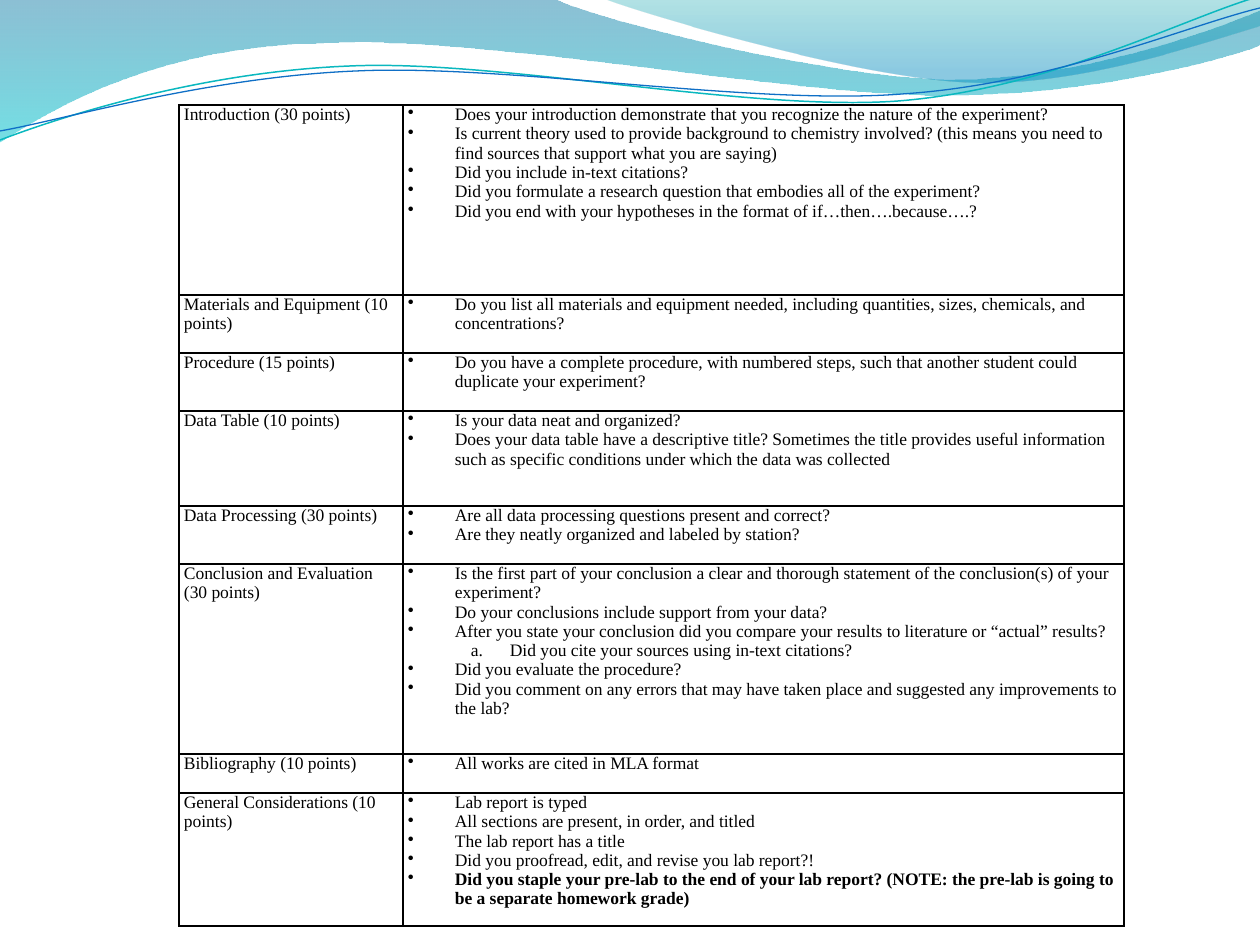
import pptx
import pptx.util
import pptx.dml.color
import pptx.oxml.ns
import lxml.etree as etree

RGBColor = pptx.dml.color.RGBColor
qn = pptx.oxml.ns.qn
PX = 914400 / 126

BLACK = RGBColor(0x00, 0x00, 0x00)
DEEP_BLUE = RGBColor(0x00, 0x74, 0xA1)
AQUA = RGBColor(0x00, 0xC6, 0xCF)
TEAL = RGBColor(0x00, 0xA1, 0xA9)
SKY = RGBColor(0x00, 0x8B, 0xBF)
LINE_TEAL = RGBColor(0x0A, 0xB8, 0xBF)
LINE_BLUE = RGBColor(0x0F, 0x6F, 0xC6)

FONT = "Times New Roman"
TABLE_LEFT, TABLE_TOP = 179, 105
COLUMNS = [224, 721]
BULLET, LETTERED, BOLD = "bullet", "lettered", "bold"
INDENTS = {BULLET: (47, -47), BOLD: (47, -47), LETTERED: (102, -39)}

RUBRIC = [
    ("Introduction (30 points)", 190, [
        (BULLET, "Does your introduction demonstrate that you recognize the nature of the experiment?"),
        (BULLET, "Is current theory used to provide background to chemistry involved? "
                 "(this means you need to find sources that support what you are saying)"),
        (BULLET, "Did you include in-text citations?"),
        (BULLET, "Did you formulate a research question that embodies all of the experiment?"),
        (BULLET, "Did you end with your hypotheses in the format of if…then….because….?"),
    ]),
    ("Materials and Equipment (10 points)", 58, [
        (BULLET, "Do you list all materials and equipment needed, including quantities, sizes, "
                 "chemicals, and concentrations?"),
    ]),
    ("Procedure (15 points)", 58, [
        (BULLET, "Do you have a complete procedure, with numbered steps, such that another student "
                 "could duplicate your experiment?"),
    ]),
    ("Data Table (10 points)", 95, [
        (BULLET, "Is your data neat and organized?"),
        (BULLET, "Does your data table have a descriptive title? Sometimes the title provides useful "
                 "information such as specific conditions under which the data was collected"),
    ]),
    ("Data Processing (30 points)", 58, [
        (BULLET, "Are all data processing questions present and correct?"),
        (BULLET, "Are they neatly organized and labeled by station?"),
    ]),
    ("Conclusion and Evaluation (30 points)", 190, [
        (BULLET, "Is the first part of your conclusion a clear and thorough statement of the "
                 "conclusion(s) of your experiment?"),
        (BULLET, "Do your conclusions include support from your data?"),
        (BULLET, "After you state your conclusion did you compare your results to literature or “actual” results?"),
        (LETTERED, "Did you cite your sources using in-text citations?"),
        (BULLET, "Did you evaluate the procedure?"),
        (BULLET, "Did you comment on any errors that may have taken place and suggested any "
                 "improvements to the lab?"),
    ]),
    ("Bibliography (10 points)", 39, [
        (BULLET, "All works are cited in MLA format"),
    ]),
    ("General Considerations (10 points)", 133, [
        (BULLET, "Lab report is typed"),
        (BULLET, "All sections are present, in order, and titled"),
        (BULLET, "The lab report has a title"),
        (BULLET, "Did you proofread, edit, and revise you lab report?!"),
        (BOLD, "Did you staple your pre-lab to the end of your lab report? "
               "(NOTE: the pre-lab is going to be a separate homework grade)"),
    ]),
]

BANDS = [
    ([[(0, 0)], [(554, -1)],
      [(600, 21), (837, 79), (955, 79)], [(1075, 79), (1207, 33), (1260, 11)],
      [(1261, 45)],
      [(1239, 55), (1096, 96), (940, 95)], [(784, 95), (481, 35), (324, 43)],
      [(163, 45), (58, 105), (-1, 142)], [(0, 0)]],
     [(0, DEEP_BLUE, 45), (1, AQUA, 55)]),
    ([[(604, -1)], [(641, 14), (859, 78), (969, 82)], [(1079, 87), (1211, 40), (1260, 26)],
      [(1260, 0)], [(604, -1)]],
     [(0, TEAL, 30), (0.8, SKY, 45)]),
]

WAVES = [
    ([[(0, 140)], [(60, 117), (199, 72), (349, 66)], [(498, 59), (747, 112), (898, 101)],
      [(1050, 89), (1182, 19), (1257, -3)]], LINE_TEAL, 0.85),
    ([[(0, 131)], [(59, 121), (207, 77), (357, 71)], [(508, 64), (752, 106), (903, 94)],
      [(1053, 84), (1186, 26), (1260, 8)]], LINE_BLUE, 0.75),
]


def px(length):
    return pptx.util.Emu(round(length * PX))


def add_curve(slide, route, close):
    first, *rest = [(px(x), px(y)) for segment in route for x, y in segment]
    builder = slide.shapes.build_freeform(*first, scale=1.0)
    builder.add_line_segments(rest, close=close)
    curve = builder.convert_to_shape()
    curve.shadow.inherit = False
    steps = iter(list(curve.element.iter(qn("a:lnTo"))))
    for segment in route[1:]:
        step, *controls = [next(steps) for _ in segment]
        if controls:
            bezier = etree.Element(qn("a:cubicBezTo"))
            step.addprevious(bezier)
            for part in (step, *controls):
                bezier.append(part[0])
                part.getparent().remove(part)
    return curve


def add_band(slide, route, stops):
    band = add_curve(slide, route, True)
    band.line.fill.background()
    band.fill.gradient()
    band.fill.gradient_angle = 270
    for stop, (position, color, _) in zip(band.fill.gradient_stops, stops):
        stop.position = position
        stop.color.rgb = color
    for color, (_, _, opacity) in zip(band.element.spPr.iter(qn("a:srgbClr")), stops):
        etree.SubElement(color, qn("a:alpha"), val=str(opacity * 1000))


def add_wave(slide, route, color, width):
    wave = add_curve(slide, route, False)
    wave.fill.background()
    wave.line.color.rgb = color
    wave.line.width = pptx.util.Pt(width)


def write(paragraph, text, size=10, color=BLACK, kind=None):
    run = paragraph.add_run()
    run.text = text
    run.font.name = FONT
    run.font.size = pptx.util.Pt(size)
    run.font.bold = kind == BOLD
    run.font.color.rgb = color
    if kind is None:
        return
    properties = paragraph._p.get_or_add_pPr()
    margin, indent = INDENTS[kind]
    properties.set("marL", str(px(margin)))
    properties.set("indent", str(px(indent)))
    if kind == LETTERED:
        paragraph.level = 1
        etree.SubElement(properties, qn("a:buAutoNum"), type="alphaLcPeriod")
    else:
        etree.SubElement(properties, qn("a:buChar"), char="•")


def format_cell(cell):
    cell.margin_left = cell.margin_right = px(5)
    cell.margin_top = cell.margin_bottom = 0
    properties = cell._tc.get_or_add_tcPr()
    for side in ("a:lnL", "a:lnR", "a:lnT", "a:lnB"):
        border = etree.SubElement(properties, qn(side), w=str(pptx.util.Pt(1)))
        fill = etree.SubElement(border, qn("a:solidFill"))
        etree.SubElement(fill, qn("a:srgbClr"), val=str(BLACK))
    cell.fill.background()


def add_rubric(slide):
    height = sum(row_height for _, row_height, _ in RUBRIC)
    rubric = slide.shapes.add_table(
        len(RUBRIC), len(COLUMNS), px(TABLE_LEFT), px(TABLE_TOP), px(sum(COLUMNS)), px(height)).table
    rubric.first_row = rubric.horz_banding = False
    for column, width in zip(rubric.columns, COLUMNS):
        column.width = px(width)
    for row, (section, row_height, questions) in zip(rubric.rows, RUBRIC):
        row.height = px(row_height)
        section_cell, question_cell = row.cells
        format_cell(section_cell)
        format_cell(question_cell)
        write(section_cell.text_frame.paragraphs[0], section)
        frame = question_cell.text_frame
        for index, (kind, question) in enumerate(questions):
            write(frame.add_paragraph() if index else frame.paragraphs[0], question, kind=kind)


def main():
    deck = pptx.Presentation()
    deck.slide_width, deck.slide_height = px(1260), px(945)
    slide = deck.slides.add_slide(deck.slide_layouts[6])
    for band in BANDS:
        add_band(slide, *band)
    for wave in WAVES:
        add_wave(slide, *wave)
    add_rubric(slide)
    deck.save("out.pptx")


if __name__ == "__main__":
    main()
